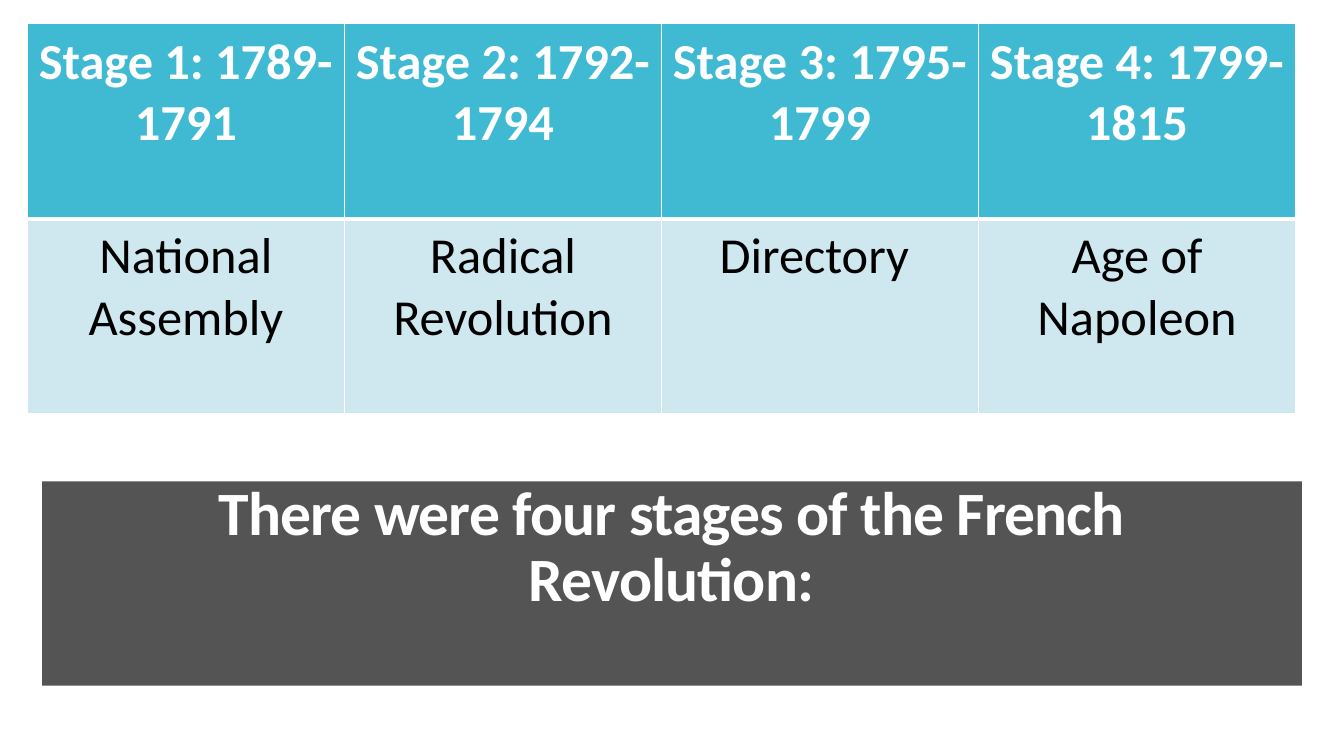
from dataclasses import dataclass

from lxml import etree
from pptx import Presentation
from pptx import util as u
from pptx.dml.color import RGBColor
from pptx.enum import shapes, text
from pptx.oxml.ns import qn


@dataclass(frozen=True)
class Theme:
    font: str = "Calibri"
    white: str = "FFFFFF"
    black: str = "000000"
    header: str = "40BAD2"
    body: str = "CFE7EE"
    panel: str = "545454"
    title_size: int = 44
    table_size: int = 36
    thin: float = 1
    thick: float = 3


THEME = Theme()
TITLE = "There were four stages of the French Revolution:"
STAGES = [
    ("Stage 1: 1789-1791", "National Assembly"),
    ("Stage 2: 1792-1794", "Radical Revolution"),
    ("Stage 3: 1795-1799", "Directory "),
    ("Stage 4: 1799-1815", "Age of Napoleon"),
]


def write_centred(frame, words, size, color, bold):
    frame.text = words
    para = frame.paragraphs[0]
    para.alignment = text.PP_ALIGN.CENTER
    span = para.runs[0]
    span.font.name = THEME.font
    span.font.size = u.Pt(size)
    span.font.bold = bold
    span.font.color.rgb = RGBColor.from_string(color)
    return para


def set_borders(cell, widths):
    properties = cell._tc.get_or_add_tcPr()
    for side, width in widths.items():
        line = etree.SubElement(properties, qn(f"a:ln{side}"), w=str(u.Pt(width)))
        fill = etree.SubElement(line, qn("a:solidFill"))
        etree.SubElement(fill, qn("a:srgbClr"), val=THEME.white)


def fill_cell(cell, words, is_header):
    cell.margin_left = cell.margin_right = u.Cm(0.18)
    cell.margin_top = cell.margin_bottom = u.Cm(0.18)
    set_borders(cell, {
        "L": THEME.thin,
        "R": THEME.thin,
        "T": THEME.thin,
        "B": THEME.thick if is_header else THEME.thin,
    })
    cell.fill.solid()
    cell.fill.fore_color.rgb = RGBColor.from_string(THEME.header if is_header else THEME.body)
    color = THEME.white if is_header else THEME.black
    write_centred(cell.text_frame, words, THEME.table_size, color, is_header)


def add_stage_table(page):
    frame = page.shapes.add_table(2, len(STAGES), u.Cm(0.69), u.Cm(0.6), u.Cm(31.96), u.Cm(9.82))
    for column, stage in enumerate(STAGES):
        for row, words in enumerate(stage):
            fill_cell(frame.table.cell(row, column), words, row == 0)


def add_block(page, left, top, width, height, color):
    block = page.shapes.add_shape(shapes.MSO_SHAPE.RECTANGLE, left, top, width, height)
    block.shadow.inherit = False
    block.fill.solid()
    block.fill.fore_color.rgb = RGBColor.from_string(color)
    block.line.fill.background()


def add_title(page):
    box = page.shapes.add_textbox(u.Cm(1.53), u.Cm(12.15), u.Cm(30.78), u.Cm(5.1))
    frame = box.text_frame
    frame.word_wrap = True
    frame.margin_left = frame.margin_right = u.Cm(0.8)
    frame.margin_top = frame.margin_bottom = 0
    para = write_centred(frame, TITLE, THEME.title_size, THEME.white, True)
    para.line_spacing = 0.9
    para.runs[0]._r.get_or_add_rPr().set("spc", "-60")


def main():
    deck = Presentation()
    deck.slide_width = u.Cm(33.87)
    deck.slide_height = u.Cm(19.05)
    page = deck.slides.add_slide(deck.slide_layouts[6])
    add_block(page, 0, 0, deck.slide_width, deck.slide_height, THEME.white)
    add_block(page, u.Cm(1.06), u.Cm(12.13), u.Cm(31.75), u.Cm(5.15), THEME.panel)
    add_title(page)
    add_stage_table(page)
    deck.save("out.pptx")


if __name__ == "__main__":
    main()
